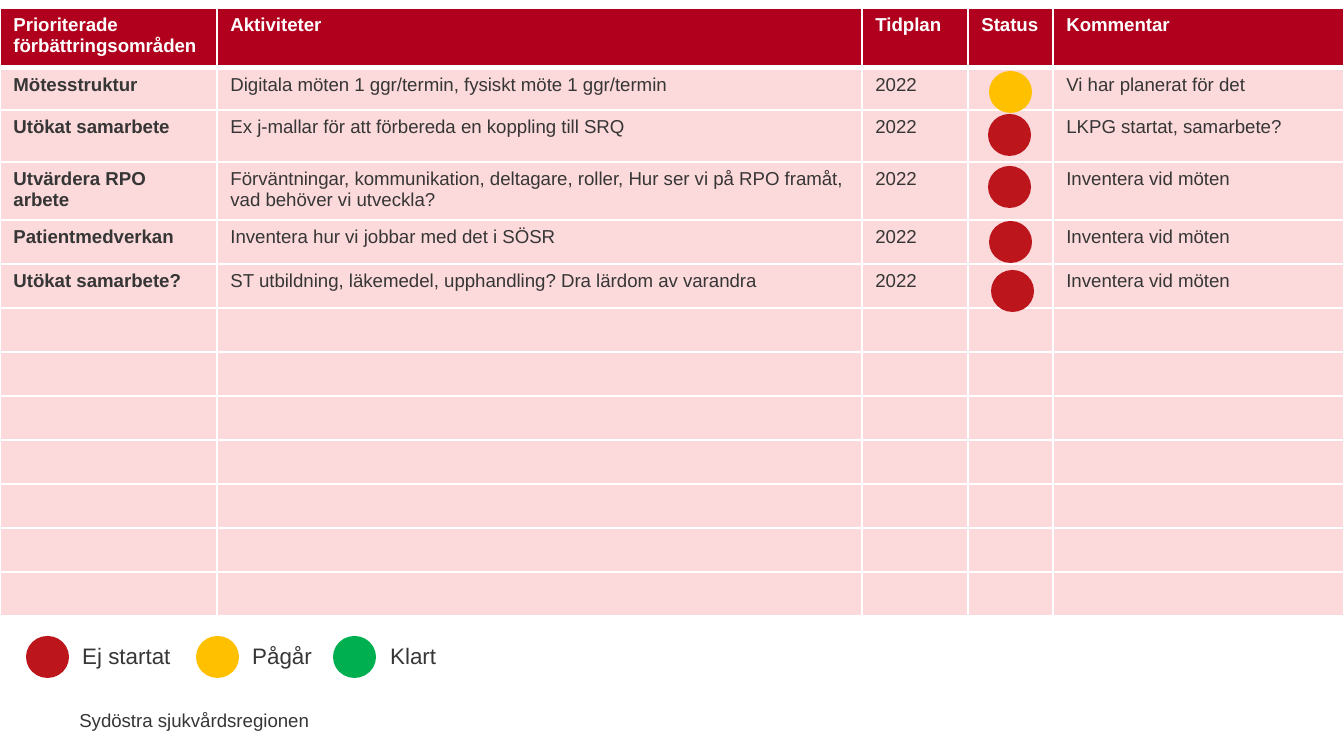
from lxml.etree import SubElement
from pptx import Presentation
from pptx.dml.color import RGBColor as Rgb
from pptx.enum.shapes import MSO_SHAPE as Shape
from pptx.enum.text import MSO_AUTO_SIZE as Fit, PP_ALIGN as Align
from pptx.oxml.ns import qn
from pptx.util import Pt

SCALE = 914400 / 134.4
HUES = {
    "white": "FFFFFF", "ink": "363636", "head": "B1001E", "body": "FCD9DA",
    "red": "BC151C", "amber": "FFC000", "green": "00B050",
}
COLS = [217, 645, 106, 85, 291]
ROWS = [60, 42, 52, 58] + [44] * 9
HEAD = ["Prioriterade förbättringsområden", "Aktiviteter", "Tidplan", "Status", "Kommentar"]
TASKS = [
    ("Mötesstruktur", "Digitala möten 1 ggr/termin, fysiskt möte 1 ggr/termin",
     "Vi har planerat för det"),
    ("Utökat samarbete", "Ex j-mallar för att förbereda en koppling till SRQ",
     "LKPG startat, samarbete?"),
    ("Utvärdera RPO arbete",
     "Förväntningar, kommunikation, deltagare, roller, "
     "Hur ser vi på RPO framåt, vad behöver vi utveckla?",
     "Inventera vid möten"),
    ("Patientmedverkan", "Inventera hur vi jobbar med det i SÖSR", "Inventera vid möten"),
    ("Utökat samarbete?", "ST utbildning, läkemedel, upphandling? Dra lärdom av varandra",
     "Inventera vid möten"),
]
LEGEND = [
    ("Ej startat", "red", 26, 69, 117, False),
    ("Pågår", "amber", 196, 239, 202, True),
    ("Klart", "green", 333, 377, 147, True),
]
DOTS = [("amber", 989, 71), ("red", 988, 114), ("red", 988, 166),
        ("red", 989, 221), ("red", 991, 270)]


def px(num):
    """Turn pixels into EMU."""
    return round(num * SCALE)


def write(frame, text, size=10, hue="ink", bold=False, align=Align.LEFT):
    """Put formatted text in a frame."""
    par = frame.paragraphs[0]
    par.alignment = align
    if not text:
        SubElement(par._p, qn("a:endParaRPr"), sz=str(size * 100))
        return
    run = par.add_run()
    run.text = text
    font = run.font
    font.name, font.size, font.bold = "Arial", Pt(size), bold
    font.color.rgb = Rgb.from_string(HUES[hue])


class Board:
    """Hold the style and the current slide."""

    def __init__(self, slide):
        """Start on a slide."""
        self.shapes = slide.shapes

    def text(self, text, left, top, width, height, wrap=True, **style):
        """Add a text box."""
        frame = self.shapes.add_textbox(px(left), px(top), px(width), px(height)).text_frame
        frame.word_wrap = wrap
        frame.auto_size = Fit.SHAPE_TO_FIT_TEXT
        write(frame, text, **style)

    def dot(self, hue, left, top):
        """Add a status dot."""
        dot = self.shapes.add_shape(Shape.OVAL, px(left), px(top), px(43), px(42))
        dot.shadow.inherit = False
        dot.fill.solid()
        dot.fill.fore_color.rgb = Rgb.from_string(HUES[hue])
        dot.line.fill.background()

    def edge(self, cell, **widths):
        """Draw white cell borders, set before the cell's fill."""
        props = cell._tc.get_or_add_tcPr()
        for side, width in widths.items():
            line = SubElement(props, qn(f"a:ln{side}"), w=str(Pt(width)))
            fill = SubElement(line, qn("a:solidFill"))
            SubElement(fill, qn("a:srgbClr"), val=HUES["white"])

    def table(self, data, left, top):
        """Add the plan table."""
        grid = self.shapes.add_table(len(ROWS), len(COLS), px(left), px(top),
                                     px(sum(COLS)), px(sum(ROWS))).table
        for col, width in zip(grid.columns, COLS):
            col.width = px(width)
        for row, height in zip(grid.rows, ROWS):
            row.height = px(height)
        for r, line in enumerate(data):
            for c, text in enumerate(line):
                cell = grid.cell(r, c)
                self.edge(cell, L=1, R=1, T=3 if r == 1 else 1, B=3 if r == 0 else 1)
                cell.fill.solid()
                cell.fill.fore_color.rgb = Rgb.from_string(HUES["body" if r else "head"])
                write(cell.text_frame, text, hue="ink" if r else "white",
                      bold=r == 0 or c == 0)


def main():
    """Build the slide."""
    deck = Presentation()
    deck.slide_width, deck.slide_height = px(1344), px(756)
    board = Board(deck.slides.add_slide(deck.slide_layouts[6]))
    board.text("Sydöstra sjukvårdsregionen", 64, 702, 258, 36, wrap=False, align=Align.RIGHT)
    plan = [HEAD] + [(area, work, "2022", "", note) for area, work, note in TASKS]
    plan += [[""] * len(COLS)] * (len(ROWS) - len(plan))
    board.table(plan, 0, 8)
    for name, hue, left, start, width, wrap in LEGEND:
        board.dot(hue, left, 636)
        board.text(name, start, 636, width, 40, wrap=wrap, size=12)
    for dot in DOTS:
        board.dot(*dot)
    deck.save("out.pptx")


if __name__ == "__main__":
    main()
